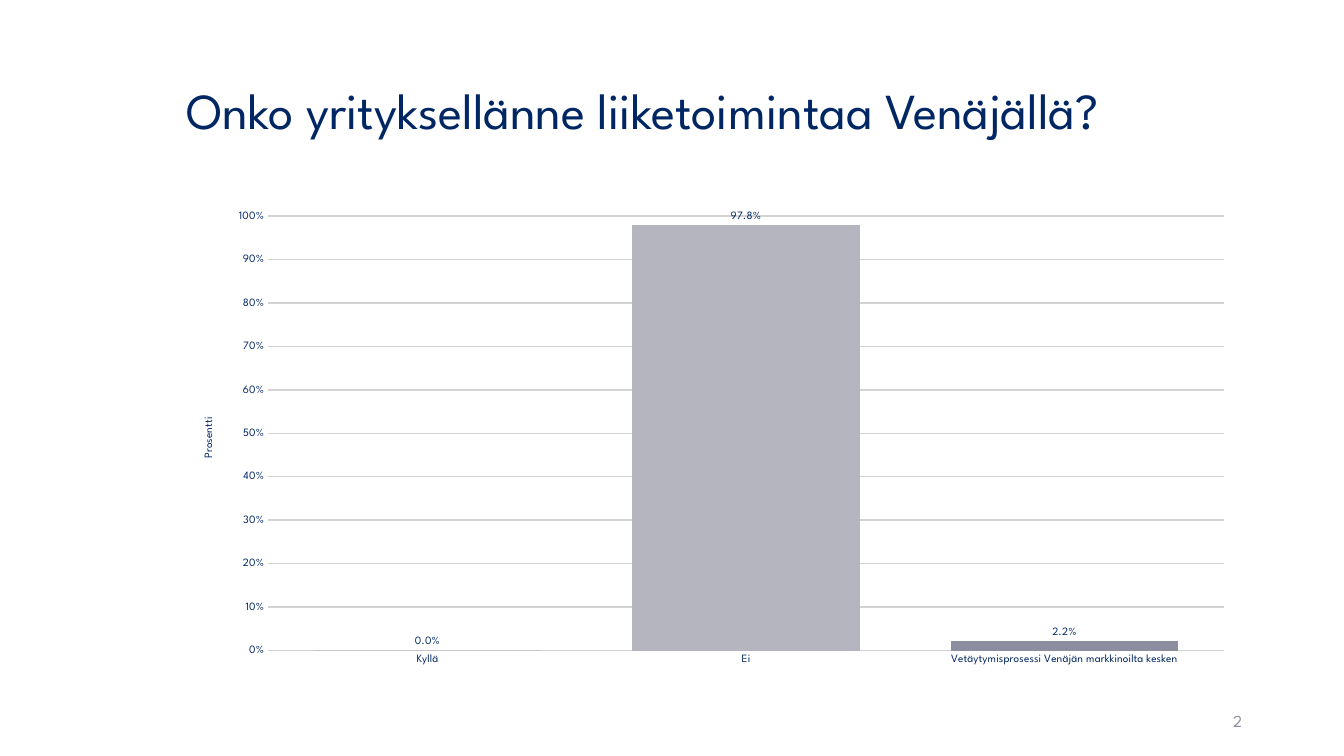
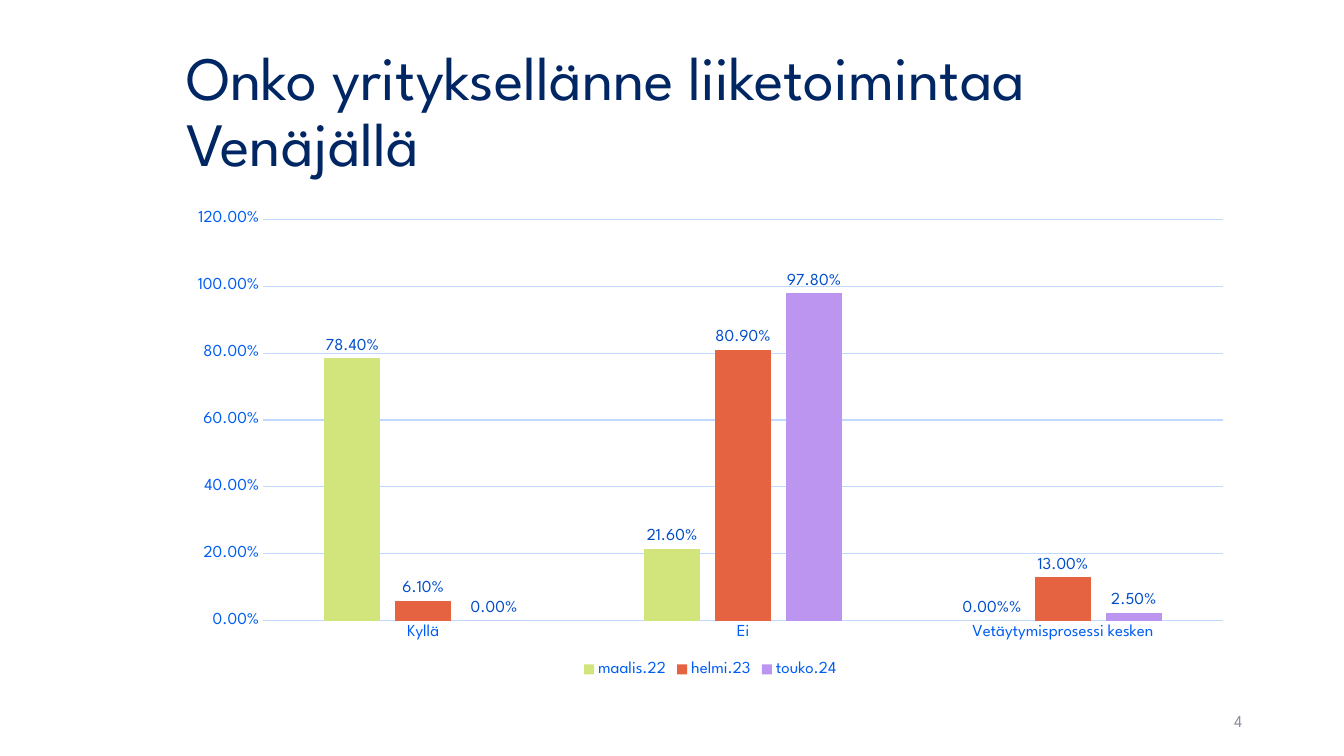
from lxml import etree
from pptx import Presentation
from pptx.chart.data import CategoryChartData
from pptx.dml.color import RGBColor
from pptx.enum.chart import XL_CHART_TYPE, XL_LABEL_POSITION, XL_LEGEND_POSITION, XL_TICK_MARK
from pptx.enum.text import MSO_ANCHOR, MSO_AUTO_SIZE, PP_ALIGN
from pptx.oxml.ns import qn
from pptx.util import Inches, Pt

COLUMNS = XL_CHART_TYPE.COLUMN_CLUSTERED
OUTSIDE_END = XL_LABEL_POSITION.OUTSIDE_END
LEGEND_BOTTOM = XL_LEGEND_POSITION.BOTTOM
NO_TICKS = XL_TICK_MARK.NONE
MIDDLE = MSO_ANCHOR.MIDDLE
NO_AUTOFIT = MSO_AUTO_SIZE.NONE
LEFT, RIGHT = PP_ALIGN.LEFT, PP_ALIGN.RIGHT

FONT = "League Spartan"
NAVY = RGBColor(0x00, 0x26, 0x63)
BLUE = RGBColor(0x00, 0x5D, 0xF3)
LABEL_BLUE = RGBColor(0x00, 0x4D, 0xCA)
PALE_BLUE = RGBColor(0xC1, 0xD9, 0xFF)
GRID_GREY = RGBColor(0xD3, 0xD3, 0xD3)
DARK_GREY = RGBColor(0x64, 0x68, 0x83)
MID_GREY = RGBColor(0x8C, 0x8E, 0x9F)
LIGHT_GREY = RGBColor(0xB4, 0xB5, 0xBF)
LIME = RGBColor(0xD1, 0xE5, 0x7C)
CORAL = RGBColor(0xE6, 0x63, 0x42)
LILAC = RGBColor(0xBB, 0x95, 0xEF)

TITLE_BOX = (Inches(1.75), Inches(0.4), Inches(10.59), Inches(1.45))
CHART_BOX = (Inches(1.75), Inches(2), Inches(10.59), Inches(4.76))
NUMBER_BOX = (Inches(9.42), Inches(6.95), Inches(3), Inches(0.4))


def style_font(font, size, color):
    """Apply the deck's typeface with a size in points and a colour."""
    font.name = FONT
    font.size = Pt(size)
    font.bold = False
    font.color.rgb = color


def add_titled_slide(prs, title_text, title_size, number):
    """Add a slide with its title and slide number."""
    slide = prs.slides.add_slide(prs.slide_layouts[5])
    title = slide.shapes.title
    title.left, title.top, title.width, title.height = TITLE_BOX
    number_box = slide.shapes.add_textbox(*NUMBER_BOX)
    for box, text, size, color, align in (
        (title, title_text, title_size, NAVY, LEFT),
        (number_box, number, 12, MID_GREY, RIGHT),
    ):
        frame = box.text_frame
        frame.text = text
        frame.word_wrap = True
        frame.auto_size = NO_AUTOFIT
        frame.vertical_anchor = MIDDLE
        paragraph = frame.paragraphs[0]
        paragraph.alignment = align
        style_font(paragraph.font, size, color)
    title.text_frame.paragraphs[0].line_spacing = 0.9
    return slide


def add_column_chart(slide, box, categories, series, number_format, gap, overlap):
    """Add a clustered column chart with (name, values) series."""
    data = CategoryChartData(number_format=number_format)
    data.categories = categories
    for name, values in series:
        data.add_series(name, values)
    chart = slide.shapes.add_chart(COLUMNS, *box, data).chart
    chart.has_title = False
    chart.has_legend = False
    style_font(chart.font, 10, NAVY)
    plot = chart.plots[0]
    plot.gap_width, plot.overlap, plot.vary_by_categories = gap, overlap, False
    return chart


def style_axes(chart, size, color, number_format, top, step, grid_color, grid_width):
    """Format both axes and the horizontal grid lines."""
    for axis in (chart.category_axis, chart.value_axis):
        axis.major_tick_mark = axis.minor_tick_mark = NO_TICKS
        axis.format.line.fill.background()
        style_font(axis.tick_labels.font, size, color)
    values = chart.value_axis
    values.minimum_scale, values.maximum_scale, values.major_unit = 0, top, step
    values.tick_labels.number_format = number_format
    values.tick_labels.number_format_is_linked = False
    values.has_major_gridlines = True
    grid = values.major_gridlines.format.line
    grid.color.rgb, grid.width = grid_color, Pt(grid_width)


def style_labels(series, size, color, number_format):
    """Show the values above the columns of a series."""
    labels = series.data_labels
    labels.show_value = True
    labels.position = OUTSIDE_END
    labels.number_format = number_format
    labels.number_format_is_linked = False
    style_font(labels.font, size, color)


def fill_solid(part, color):
    """Fill a series or a point with one colour."""
    part.format.fill.solid()
    part.format.fill.fore_color.rgb = color


def place_plot(chart, **fractions):
    """Fix the inner plot area as fractions x, y, w and h of the chart."""
    plot_area = chart.plots[0]._element.getparent()
    for old in plot_area.findall(qn("c:layout")):
        plot_area.remove(old)
    layout = etree.Element(qn("c:layout"))
    manual = etree.SubElement(layout, qn("c:manualLayout"))
    settings = {"layoutTarget": "inner", "xMode": "edge", "yMode": "edge", **fractions}
    for tag, value in settings.items():
        etree.SubElement(manual, qn(f"c:{tag}")).set("val", str(value))
    plot_area.insert(0, layout)


def add_current_answers(slide, box):
    """Draw the answers of the latest survey."""
    categories = ("Kyllä", "Ei", "Vetäytymisprosessi Venäjän markkinoilta kesken")
    chart = add_column_chart(
        slide, box, categories, [("Series 1", (0, 0.978, 0.022))], "0.0%", 40, -2)
    style_axes(chart, 8, NAVY, "0%", 1, 0.1, GRID_GREY, 1)
    axis_title = chart.value_axis.axis_title.text_frame
    axis_title.text = "Prosentti"
    style_font(axis_title.paragraphs[0].font, 8, NAVY)
    answers = chart.series[0]
    style_labels(answers, 8, NAVY, "0.0%")
    for index, color in enumerate((DARK_GREY, LIGHT_GREY, MID_GREY)):
        fill_solid(answers.points[index], color)
    place_plot(chart, x=0.086, y=0.03, w=0.895, h=0.906)


def add_survey_comparison(slide, box):
    """Draw the answers of three surveys side by side."""
    categories = ("Kyllä", "Ei", "Vetäytymisprosessi kesken")
    surveys = [
        ("maalis.22", (0.784, 0.216, 0)),
        ("helmi.23", (0.061, 0.809, 0.13)),
        ("touko.24", (0, 0.978, 0.025)),
    ]
    chart = add_column_chart(slide, box, categories, surveys, "0.00%", 219, -27)
    style_axes(chart, 12, BLUE, "0.00%", 1.2, 0.2, PALE_BLUE, 0.75)
    baseline = chart.category_axis.format.line
    baseline.color.rgb, baseline.width = PALE_BLUE, Pt(0.75)
    for survey, color in zip(chart.series, (LIME, CORAL, LILAC)):
        fill_solid(survey, color)
        style_labels(survey, 12, LABEL_BLUE, "0.00%")
    withdrawal = chart.series[0].points[2].data_label
    withdrawal_run = withdrawal.text_frame.paragraphs[0].add_run()
    withdrawal_run.text = "0.00%%"
    style_font(withdrawal_run.font, 12, LABEL_BLUE)
    withdrawal.position = OUTSIDE_END
    chart.has_legend = True
    chart.legend.position = LEGEND_BOTTOM
    chart.legend.include_in_layout = False
    style_font(chart.legend.font, 12, BLUE)


def main():
    """Build and save the deck."""
    prs = Presentation()
    prs.slide_width, prs.slide_height = Inches(13.33), Inches(7.5)
    question = "Onko yrityksellänne liiketoimintaa Venäjällä"
    add_current_answers(add_titled_slide(prs, question + "?", 36, "2"), CHART_BOX)
    add_survey_comparison(add_titled_slide(prs, question, 44, "4"), CHART_BOX)
    prs.save("out.pptx")


if __name__ == "__main__":
    main()
